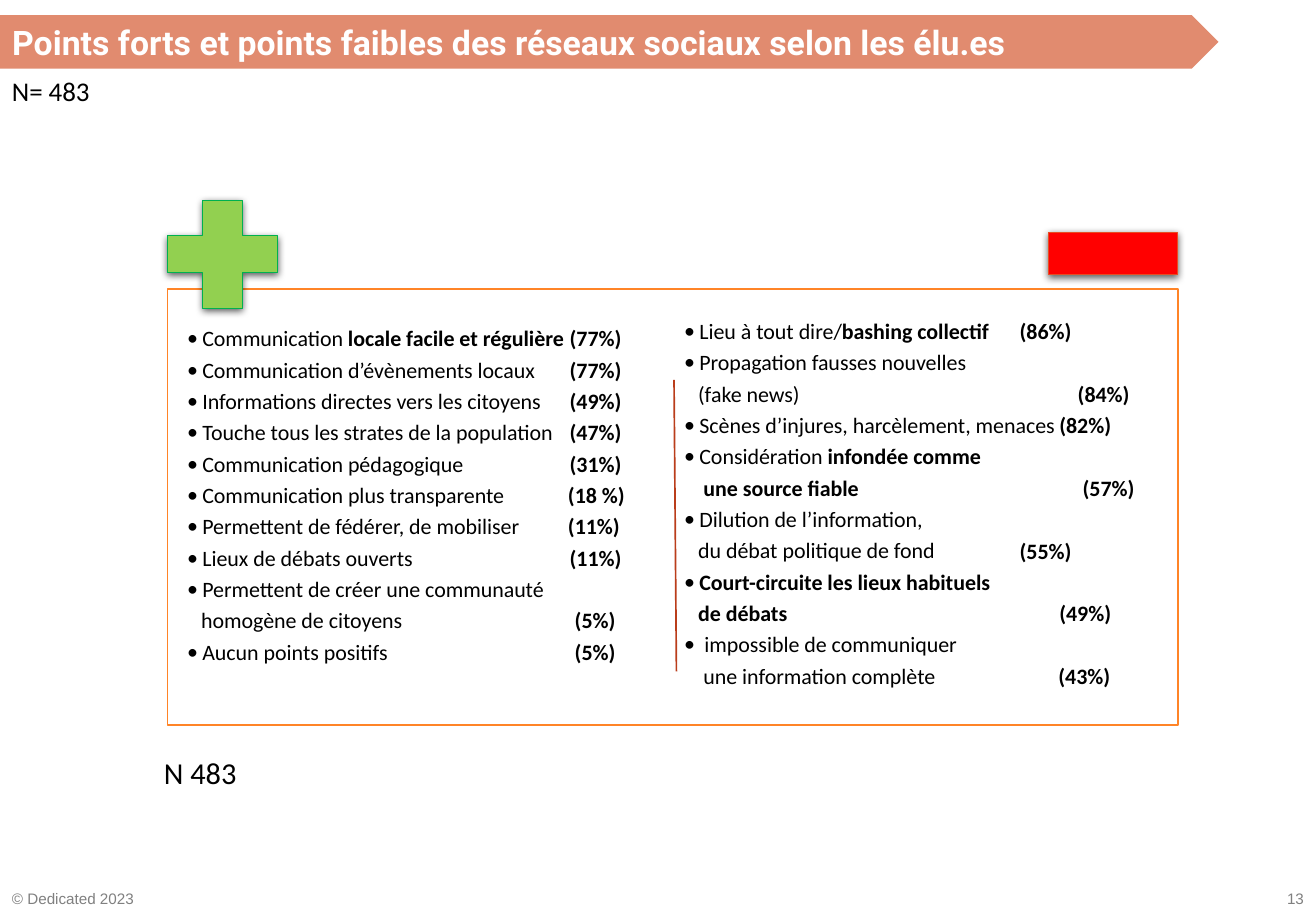
from lxml import etree
from pptx import Presentation
from pptx.dml.color import RGBColor
from pptx.enum.shapes import MSO_CONNECTOR, MSO_SHAPE
from pptx.enum.text import MSO_ANCHOR, MSO_AUTO_SIZE, PP_ALIGN
from pptx.oxml.ns import qn
from pptx.util import Pt

LEFT, RIGHT = PP_ALIGN.LEFT, PP_ALIGN.RIGHT
MIDDLE = MSO_ANCHOR.MIDDLE
NO_AUTOFIT = MSO_AUTO_SIZE.NONE
BANNER, RECTANGLE, CROSS = MSO_SHAPE.PENTAGON, MSO_SHAPE.RECTANGLE, MSO_SHAPE.CROSS
STRAIGHT = MSO_CONNECTOR.STRAIGHT

BLACK = RGBColor(0x00, 0x00, 0x00)
WHITE = RGBColor(0xFF, 0xFF, 0xFF)
GREY = RGBColor(0x80, 0x80, 0x80)
SALMON = RGBColor(0xE1, 0x8B, 0x6F)
ORANGE = RGBColor(0xFF, 0x84, 0x27)
LIME = RGBColor(0x92, 0xD0, 0x50)
GREEN = RGBColor(0x00, 0xB0, 0x50)
RED = RGBColor(0xFF, 0x00, 0x00)
VERMILION = RGBColor(0xE8, 0x4C, 0x22)
RUST = RGBColor(0xBA, 0x3D, 0x1B)

LIST_SIZE = 13
LINE_PITCH = 18.61
SPACE_AFTER = 4.52
LIST_INSET = 2.16
HANG, WIDE_HANG = 9, 12
NEXT_LINE, WIDE_NEXT_LINE = 8.3, 11.4

# Each line: bulleted, indent, runs (text, bold), share, offset of the share
STRENGTHS = [
    (True, HANG, [("Communication ", False), ("locale facile et régulière", True)], "(77%)", 1),
    (True, HANG, [("Communication d’évènements locaux", False)], "(77%)", 1),
    (True, HANG, [("Informations directes vers les citoyens", False)], "(49%)", 1),
    (True, HANG, [("Touche tous les strates de la population", False)], "(47%)", 1),
    (True, HANG, [("Communication pédagogique", False)], "(31%)", 1),
    (True, HANG, [("Communication plus transparente", False)], "(18 %)", 0),
    (True, HANG, [("Permettent de fédérer, de mobiliser", False)], "(11%)", 0),
    (True, HANG, [("Lieux de débats ouverts", False)], "(11%)", 1),
    (True, HANG, [("Permettent de créer une communauté", False)], None, 0),
    (False, NEXT_LINE, [("homogène de citoyens", False)], "(5%)", 4),
    (True, HANG, [("Aucun points positifs", False)], "(5%)", 4),
]
WEAKNESSES = [
    (True, HANG, [("Lieu à tout dire/", False), ("bashing collectif", True)], "(86%)", 0),
    (True, HANG, [("Propagation fausses nouvelles", False)], None, 0),
    (False, NEXT_LINE, [("(fake news)", False)], "(84%)", 34.4),
    (True, HANG, [("Scènes d’injures, harcèlement, menaces", False)], "(82%)", 23.5),
    (True, HANG, [("Considération ", False), ("infondée comme", True)], None, 0),
    (False, WIDE_NEXT_LINE, [("une source fiable", True)], "(57%)", 37.3),
    (True, HANG, [("Dilution de l’information,", False)], None, 0),
    (False, NEXT_LINE, [("du débat politique de fond", False)], "(55%)", 0),
    (True, HANG, [("Court-circuite les lieux habituels", True)], None, 0),
    (False, NEXT_LINE, [("de débats", True)], "(49%)", 23.5),
    (True, WIDE_HANG, [("impossible de communiquer", False)], None, 0),
    (False, WIDE_NEXT_LINE, [("une information complète", False)], "(43%)", 23),
]


def add_run(paragraph, text, size, color=BLACK, font="Calibri", bold=False):
    run = paragraph.add_run()
    run.text = text
    run.font.name = font
    run.font.size = Pt(size)
    run.font.bold = bold
    run.font.color.rgb = color


def add_box(slide, left, top, width, height):
    box = slide.shapes.add_textbox(Pt(left), Pt(top), Pt(width), Pt(height))
    box.text_frame.word_wrap = True
    return box.text_frame


def add_label(slide, text, left, top, width, height, size, color=BLACK,
              font="Calibri", align=LEFT):
    paragraph = add_box(slide, left, top, width, height).paragraphs[0]
    paragraph.alignment = align
    add_run(paragraph, text, size, color, font)


def add_block(slide, kind, left, top, width, height, fill, line=None, weight=1):
    block = slide.shapes.add_shape(kind, Pt(left), Pt(top), Pt(width), Pt(height))
    block.shadow.inherit = False
    block.fill.solid()
    block.fill.fore_color.rgb = fill
    if line is None:
        block.line.fill.background()
    else:
        block.line.color.rgb = line
        block.line.width = Pt(weight)
    return block


def cast_shadow(block):
    effects = block.element.spPr.find(qn("a:effectLst"))
    shadow = etree.SubElement(effects, qn("a:outerShdw"), blurRad=str(Pt(4.5)),
                              dist=str(Pt(1.5)), dir="5400000", rotWithShape="0")
    color = etree.SubElement(shadow, qn("a:srgbClr"), val=str(BLACK))
    etree.SubElement(color, qn("a:alpha"), val="63000")


def add_list_frame(slide, left, top, width, height):
    frame = add_box(slide, left, top, width, height)
    frame.margin_left = frame.margin_right = Pt(LIST_INSET)
    frame.margin_top = frame.margin_bottom = Pt(LIST_INSET)
    return frame


def add_list_line(frame, row, indent, bulleted=False):
    paragraph = frame.paragraphs[0] if row == 0 else frame.add_paragraph()
    paragraph.line_spacing = 0.9
    paragraph.space_after = Pt(SPACE_AFTER)
    properties = paragraph._p.get_or_add_pPr()
    properties.set("marL", str(Pt(indent)))
    properties.set("indent", str(Pt(-indent if bulleted else 0)))
    if bulleted:
        etree.SubElement(properties, qn("a:buFont"), typeface="Calibri")
        etree.SubElement(properties, qn("a:buChar"), char="•")
    else:
        etree.SubElement(properties, qn("a:buNone"))
    return paragraph


def add_opinions(slide, opinions, left, top, width, share_left, share_width):
    """A bulleted list and a column of shares on the same lines."""
    height = len(opinions) * LINE_PITCH + 2 * LIST_INSET
    opinion_frame = add_list_frame(slide, left, top, width, height)
    share_frame = add_list_frame(slide, share_left, top, share_width, height)
    skipped = 0
    for row, (bulleted, indent, runs, share, offset) in enumerate(opinions):
        opinion = add_list_line(opinion_frame, row, indent, bulleted)
        for text, bold in runs:
            add_run(opinion, text, LIST_SIZE, bold=bold)
        if share is None:
            skipped += 1
            continue
        share_line = add_list_line(share_frame, row, offset)
        if skipped:
            share_line.space_before = Pt(skipped * LINE_PITCH)
        skipped = 0
        add_run(share_line, share, LIST_SIZE, bold=True)


def add_title(slide, text, left, top, width, height):
    add_block(slide, BANNER, left, top, width, height, SALMON)
    title = slide.shapes.title
    title.left, title.top, title.width, title.height = Pt(left), Pt(top), Pt(width), Pt(height)
    # Bring the title in front of its banner
    slide.shapes._spTree.append(title.element)
    frame = title.text_frame
    frame.auto_size = NO_AUTOFIT
    frame.vertical_anchor = MIDDLE
    frame.paragraphs[0].alignment = LEFT
    add_run(frame.paragraphs[0], text, 20, WHITE, "Roboto", True)


def add_divider(slide, x1, y1, x2, y2):
    divider = slide.shapes.add_connector(STRAIGHT, Pt(x1), Pt(y1), Pt(x2), Pt(y2))
    divider.line.color.rgb = RUST
    divider.line.width = Pt(1)
    etree.SubElement(divider.element.spPr, qn("a:effectLst"))


def main():
    deck = Presentation()
    deck.slide_width, deck.slide_height = Pt(779.76), Pt(540)
    slide = deck.slides.add_slide(deck.slide_layouts[5])

    # Title and sample size
    add_title(slide, "Points forts et points faibles des réseaux sociaux selon les élu.es",
              0, 9, 722, 31.6)
    add_label(slide, "N= 483", 0, 40.6, 77, 26.6, 16)

    # Panel with strengths and weaknesses
    add_block(slide, RECTANGLE, 99.2, 171.2, 599, 258.5, WHITE, ORANGE)
    add_opinions(slide, STRENGTHS, 108.7, 192.2, 240, 334.4, 50)
    add_opinions(slide, WEAKNESSES, 403.2, 187.9, 240, 602, 90)
    add_divider(slide, 399.4, 225.2, 400.8, 398)

    # Plus and minus signs
    plus = add_block(slide, CROSS, 99.2, 118.8, 65.3, 64, LIME, GREEN, 0.5)
    plus.adjustments[0] = 0.328
    minus = add_block(slide, RECTANGLE, 621.4, 137.8, 76.3, 25.2, RED, VERMILION, 0.5)
    for sign in (plus, minus):
        cast_shadow(sign)

    # Footer
    add_label(slide, "N 483", 90, 443.5, 70, 28.8, 18)
    add_label(slide, "© Dedicated 2023", 0, 523.8, 92.2, 18, 9, GREY, "Arial")
    add_label(slide, "13", 732.2, 523.8, 47.5, 18, 9, GREY, "Arial", RIGHT)

    deck.save("out.pptx")


if __name__ == "__main__":
    main()
